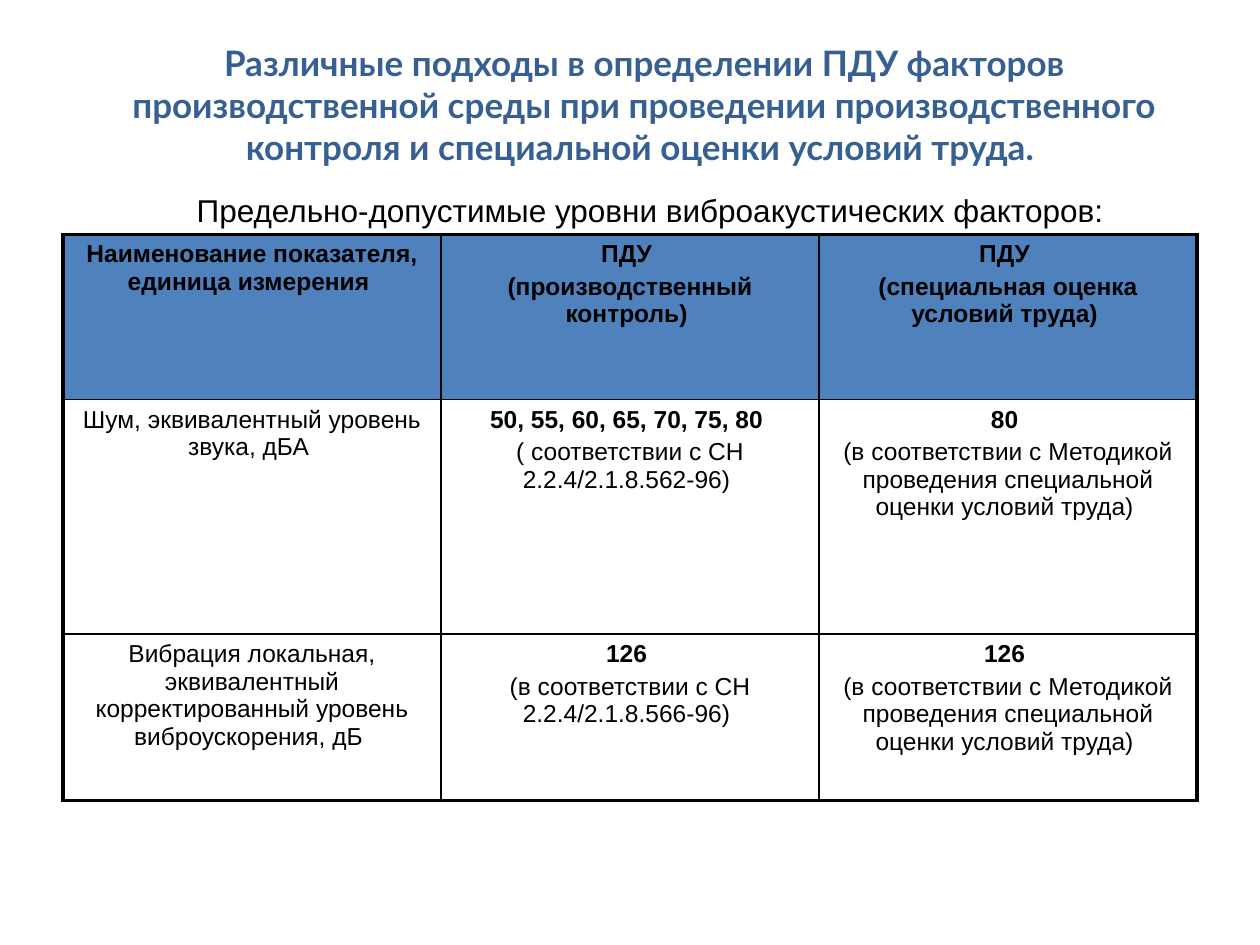
import pptx
import pptx.dml.color
import pptx.enum.text
import pptx.oxml
import pptx.oxml.ns
import pptx.util

COLORS = {"title": "376092", "text": "000000", "header": "4F81BD", "border": "000000"}
THICK, THIN = 2.25, 1
METHOD = "(в соответствии с Методикой проведения специальной оценки условий труда) "
ROWS = [
    [["Наименование показателя, единица измерения "],
     ["ПДУ ", "(производственный контроль) "],
     ["ПДУ ", "(специальная оценка условий труда) "]],
    [["Шум, эквивалентный уровень звука, дБА "],
     ["50, 55, 60, 65, 70, 75, 80 ", "( соответствии с СН 2.2.4/2.1.8.562-96) "],
     ["80 ", METHOD]],
    [["Вибрация локальная, эквивалентный корректированный уровень виброускорения, дБ "],
     ["126 ", "(в соответствии с СН 2.2.4/2.1.8.566-96) "],
     ["126 ", METHOD]],
]


def write(p, text, font="Arial", size=14, color="text", bold=False, before=0):
    """Put one formatted, centred run into a paragraph."""
    p.alignment = pptx.enum.text.PP_ALIGN.CENTER
    p.space_before = pptx.util.Pt(before)
    r = p.add_run()
    r.text = text
    r.font.name, r.font.size, r.font.bold = font, pptx.util.Pt(size), bold
    r.font.color.rgb = pptx.dml.color.RGBColor.from_string(COLORS[color])


class Deck:
    """Style and current slide, with lengths as shares of the slide's size."""

    def __init__(self, prs):
        """Start a slide that has only a title."""
        self.w, self.h = prs.slide_width, prs.slide_height
        self.s = prs.slides.add_slide(prs.slide_layouts[5])

    def box(self, x, y, w, h):
        """Turn shares into slide lengths."""
        return round(x * self.w), round(y * self.h), round(w * self.w), round(h * self.h)

    def fill_text(self, sp, text, **style):
        """Write wrapped text from the top of a shape."""
        tf = sp.text_frame
        tf.word_wrap = True
        tf.auto_size = pptx.enum.text.MSO_AUTO_SIZE.NONE
        tf.vertical_anchor = pptx.enum.text.MSO_ANCHOR.TOP
        write(tf.paragraphs[0], text, **style)

    def title(self, text, *area, **style):
        """Move and fill the title placeholder."""
        sp = self.s.shapes.title
        sp.left, sp.top, sp.width, sp.height = self.box(*area)
        self.fill_text(sp, text, **style)

    def text(self, text, *area, **style):
        """Add a text box."""
        self.fill_text(self.s.shapes.add_textbox(*self.box(*area)), text, **style)

    def borders(self, cell, widths):
        """Draw the left, right, top and bottom borders of a cell."""
        tc_pr = cell._tc.get_or_add_tcPr()
        for side, width in zip("LRTB", widths):
            tc_pr.append(pptx.oxml.parse_xml(
                f'<a:ln{side} {pptx.oxml.ns.nsdecls("a")} w="{pptx.util.Pt(width)}">'
                f'<a:solidFill><a:srgbClr val="{COLORS["border"]}"/></a:solidFill></a:ln{side}>'))

    def table(self, rows, heights, x, y, w):
        """Add a table with equal columns, a filled header and a thick frame."""
        n, m = len(rows), len(rows[0])
        table = self.s.shapes.add_table(n, m, *self.box(x, y, w, sum(heights))).table
        table.first_row = table.horz_banding = False
        for i, row in enumerate(rows):
            table.rows[i].height = round(heights[i] * self.h)
            for j, lines in enumerate(row):
                cell = table.cell(i, j)
                edges = (j == 0, j == m - 1, i == 0, i == n - 1)
                self.borders(cell, [THICK if edge else THIN for edge in edges])
                if i == 0:
                    cell.fill.solid()
                    cell.fill.fore_color.rgb = pptx.dml.color.RGBColor.from_string(COLORS["header"])
                else:
                    cell.fill.background()
                tf = cell.text_frame
                for k, line in enumerate(lines):
                    p = tf.add_paragraph() if k else tf.paragraphs[0]
                    write(p, line, bold=i == 0 or (j > 0 and k == 0), before=2.8 if k else 0)


def main():
    """Build the slide and save it."""
    prs = pptx.Presentation()
    prs.slide_width, prs.slide_height = pptx.util.Inches(10), pptx.util.Inches(7.5)
    deck = Deck(prs)
    deck.title("Различные подходы в определении ПДУ факторов производственной среды при проведении "
               "производственного контроля и специальной оценки условий труда. ",
               0.051, 0.037, 0.921, 0.148, font="Lato", size=20, color="title", bold=True)
    deck.text("Предельно-допустимые уровни виброакустических факторов: ",
              0.059, 0.196, 0.921, 0.053, size=18)
    deck.table(ROWS, [0.175, 0.248, 0.176], 0.05, 0.248, 0.9)
    prs.save("out.pptx")


if __name__ == "__main__":
    main()
